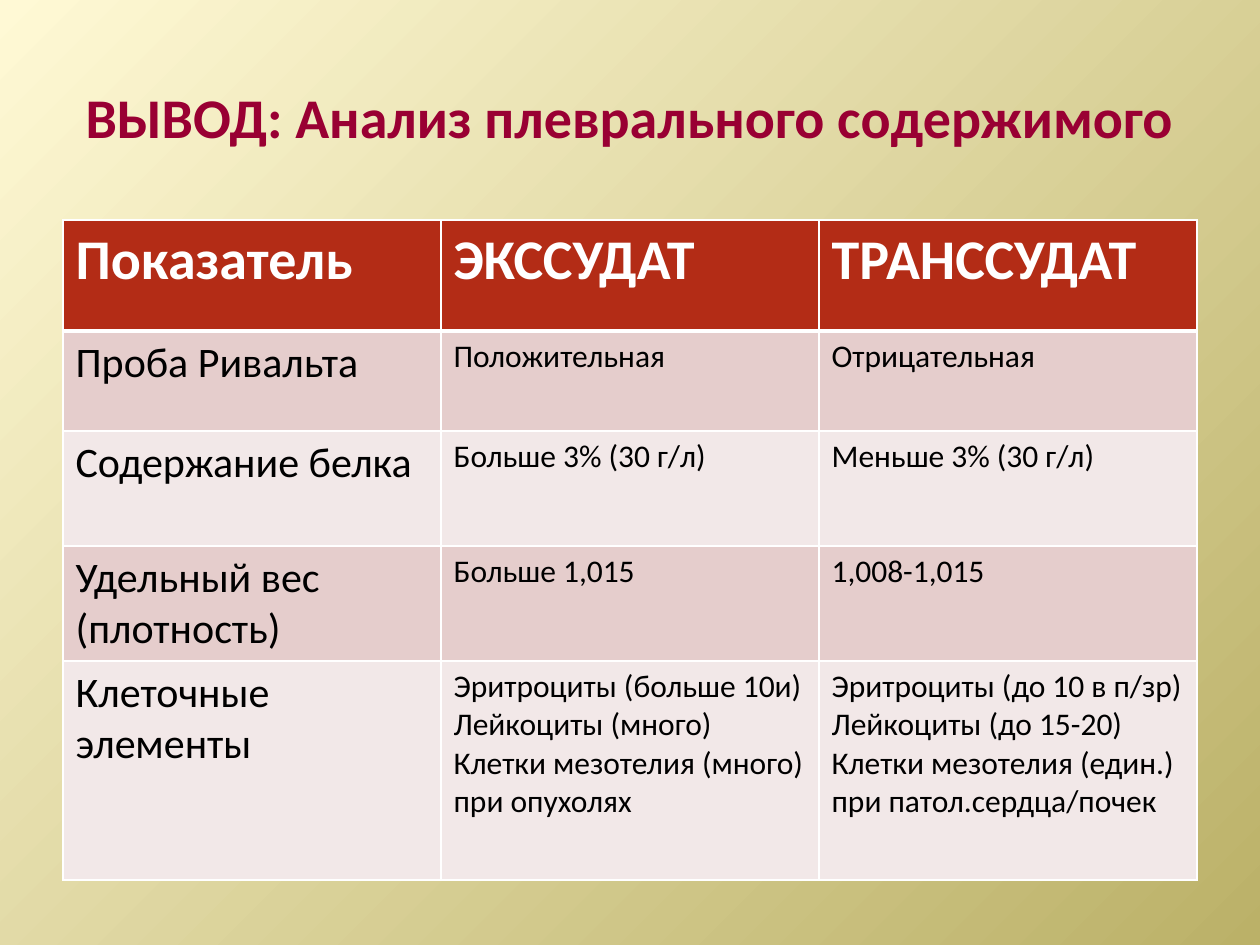
from lxml import etree
from pptx import Presentation
from pptx.dml.color import RGBColor
from pptx.enum import text
from pptx.oxml import ns
from pptx import util as u

PX = 914400 / 126
FONT = "Calibri"
CREAM = RGBColor(0xFF, 0xF9, 0xD5)
OLIVE = RGBColor(0xBB, 0xB1, 0x68)
WINE = RGBColor(0x99, 0x00, 0x33)
RED = RGBColor(0xB3, 0x2C, 0x16)
ROSE = RGBColor(0xE5, 0xCD, 0xCC)
PALE = RGBColor(0xF2, 0xE8, 0xE8)
WHITE = RGBColor(0xFF, 0xFF, 0xFF)
BLACK = RGBColor(0x00, 0x00, 0x00)

ROWS = [
    ("Показатель", "ЭКССУДАТ", "ТРАНССУДАТ"),
    ("Проба Ривальта", "Положительная", "Отрицательная"),
    ("Содержание белка", "Больше 3% (30 г/л)", "Меньше 3% (30 г/л)"),
    ("Удельный вес (плотность)", "Больше 1,015", "1,008-1,015"),
    ("Клеточные элементы",
     "Эритроциты (больше 10и)\nЛейкоциты (много)\n"
     "Клетки мезотелия (много) при опухолях",
     "Эритроциты (до 10 в п/зр)\nЛейкоциты (до 15-20)\n"
     "Клетки мезотелия (един.)\nпри патол.сердца/почек"),
]
HEIGHTS = [111, 100, 115, 115, 219]


def px(n):
    return u.Emu(round(n * PX))


class Deck:
    def __init__(self, wide, high):
        self.prs = Presentation()
        self.prs.slide_width, self.prs.slide_height = px(wide), px(high)
        self.slide = self.prs.slides.add_slide(self.prs.slide_layouts[6])

    def back(self, start, end):
        """Fill the background with a gradient spreading from the top left."""
        fill = self.slide.background.fill
        fill.gradient()
        for stop, color, place in zip(fill.gradient_stops, (start, end), (0, 1)):
            stop.color.rgb, stop.position = color, place
        line = self.slide.element.find(".//" + ns.qn("a:lin"))
        ring = etree.Element(ns.qn("a:path"), {"path": "circle"})
        etree.SubElement(ring, ns.qn("a:fillToRect"), r="100000", b="100000")
        line.getparent().replace(line, ring)

    def label(self, frame, words, size, color, bold=False, align=None):
        frame.text = words
        for para in frame.paragraphs:
            para.alignment = align
            for run in para.runs:
                font = run.font
                font.name, font.size, font.bold = FONT, u.Pt(size), bold
                font.color.rgb = color

    def title(self, words, x, y, w, h):
        frame = self.slide.shapes.add_textbox(px(x), px(y), px(w), px(h)).text_frame
        frame.word_wrap = True
        frame.vertical_anchor = text.MSO_ANCHOR.MIDDLE
        self.label(frame, words, 32, WINE, True, text.PP_ALIGN.CENTER)

    def edge(self, cell, side, width):
        line = etree.SubElement(cell._tc.get_or_add_tcPr(), ns.qn("a:ln" + side),
                                w=str(u.Pt(width)))
        fill = etree.SubElement(line, ns.qn("a:solidFill"))
        etree.SubElement(fill, ns.qn("a:srgbClr"), val=str(WHITE))

    def table(self, rows, heights, x, y, w):
        grid = self.slide.shapes.add_table(
            len(rows), len(rows[0]), px(x), px(y), px(w), px(sum(heights))).table
        for r, (row, high) in enumerate(zip(rows, heights)):
            grid.rows[r].height = px(high)
            head = r == 0
            for c, words in enumerate(row):
                cell = grid.cell(r, c)
                # The rule under the header is shared by the first two rows.
                for side in "LRTB":
                    thick = (r, side) in ((0, "B"), (1, "T"))
                    self.edge(cell, side, 3 if thick else 1)
                cell.fill.solid()
                cell.fill.fore_color.rgb = RED if head else (PALE, ROSE)[r % 2]
                size = 32 if head else 24 if c == 0 else 18
                self.label(cell.text_frame, words, size,
                           WHITE if head else BLACK, head)


def main():
    deck = Deck(1260, 945)
    deck.back(CREAM, OLIVE)
    deck.title("ВЫВОД: Анализ плеврального содержимого", 63, 38, 1134, 157)
    deck.table(ROWS, HEIGHTS, 63, 220, 1134)
    deck.prs.save("out.pptx")


if __name__ == "__main__":
    main()
